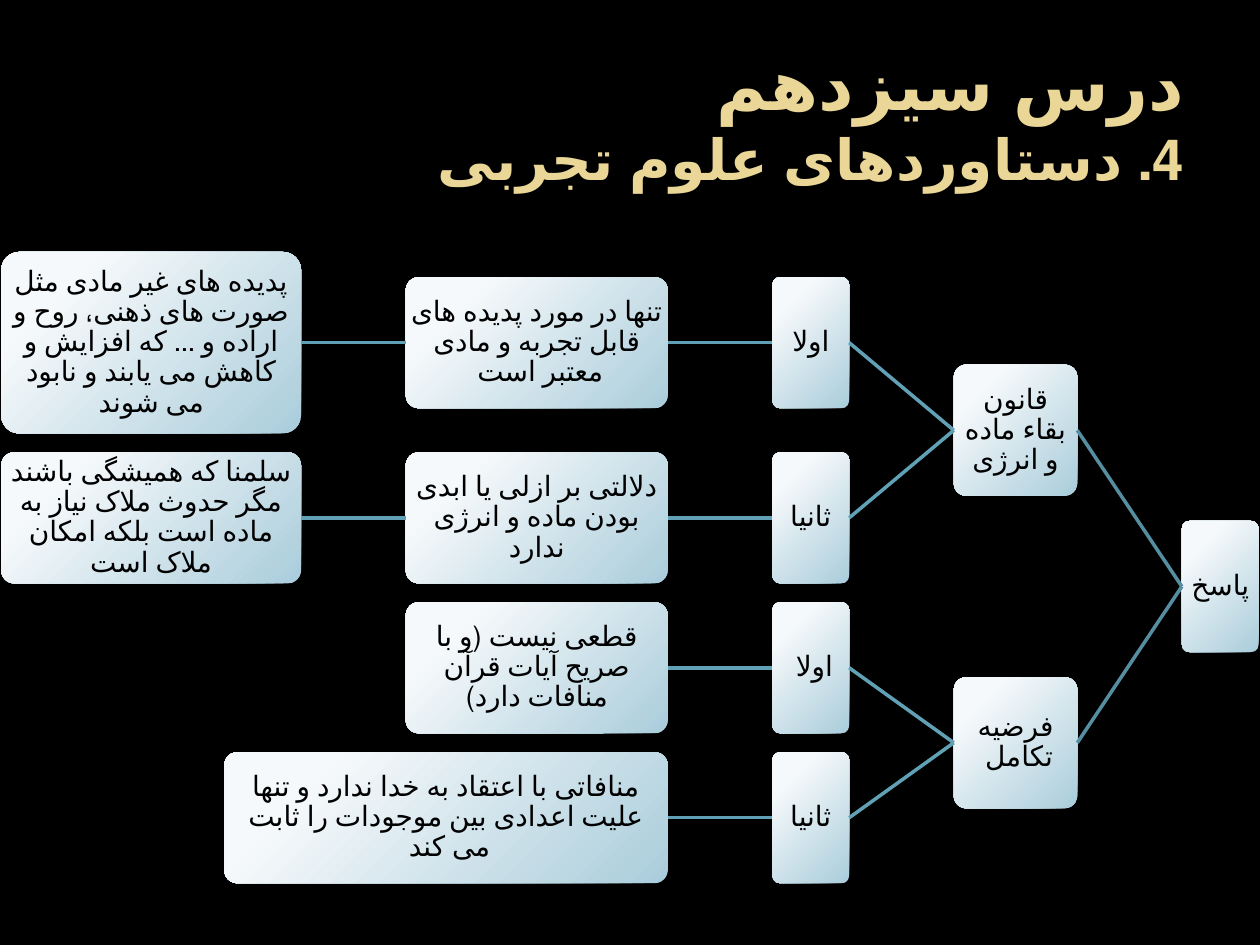
"""Builds a right-to-left answer tree about the findings of empirical science."""
from lxml import etree
from pptx import Presentation
from pptx.dml.color import RGBColor
from pptx.enum.shapes import MSO_CONNECTOR, MSO_SHAPE
from pptx.enum.text import MSO_ANCHOR, PP_ALIGN
from pptx.oxml.ns import qn
from pptx.util import Inches, Pt

STRAIGHT = MSO_CONNECTOR.STRAIGHT
ROUNDED = MSO_SHAPE.ROUNDED_RECTANGLE
MIDDLE = MSO_ANCHOR.MIDDLE
CENTER, RIGHT = PP_ALIGN.CENTER, PP_ALIGN.RIGHT
LEFT_SITE, RIGHT_SITE = 1, 3

BLACK = RGBColor(0x00, 0x00, 0x00)
GOLD = RGBColor(0xEA, 0xD6, 0x96)
BOX_LIGHT = RGBColor(0xF6, 0xF9, 0xFB)
BOX_BLUE = RGBColor(0xAA, 0xCD, 0xDB)
ROOT_LINE = RGBColor(0x56, 0x8E, 0xA1)
BRANCH_LINE = RGBColor(0x61, 0xA1, 0xB6)

TITLE = [("درس سیزدهم\v", 39.6), ("4. دستاوردهای علوم تجربی", 32.4)]

ROW_HEIGHT, ROW_GAP, COLUMN_GAP = 1.04, 0.15, 0.83
TREE_TOP, TREE_RIGHT = 2.0, 9.99


def node(text, width, *children, height=ROW_HEIGHT):
    """Describe one box and the boxes that follow from it."""
    return {"text": text, "width": width, "height": height, "children": children}


TREE = node(
    "پاسخ", 0.61,
    node(
        "قانون بقاء ماده و انرژی", 0.98,
        node("اولا", 0.61, node(
            "تنها در مورد پدیده های قابل تجربه و مادی معتبر است ", 2.08,
            node("پدیده های غیر مادی مثل صورت های ذهنی، روح و اراده و ... "
                 "که افزایش و کاهش می یابند و نابود می شوند", 2.38, height=1.44))),
        node("ثانیا", 0.61, node(
            "دلالتی بر ازلی یا ابدی بودن ماده و انرژی ندارد", 2.08,
            node("سلمنا که همیشگی باشند مگر حدوث ملاک نیاز به ماده است "
                 "بلکه امکان ملاک است", 2.38)))),
    node(
        "فرضیه تکامل ", 0.98,
        node("اولا ", 0.61, node(
            "قطعی نیست (و با صریح آیات قرآن منافات دارد)", 2.08)),
        node("ثانیا", 0.61, node(
            "منافاتی با اعتقاد به خدا ندارد و تنها علیت اعدادی بین موجودات را "
            "ثابت می کند ", 3.52))))


def write(frame, runs, font, color, align, bold=False, spacing=1.0, inset=None):
    """Fill a text frame with one right-to-left paragraph."""
    frame.word_wrap = True
    frame.vertical_anchor = MIDDLE
    if inset is not None:
        frame.margin_left = frame.margin_right = Inches(inset)
        frame.margin_top = frame.margin_bottom = Inches(inset)
    paragraph = frame.paragraphs[0]
    paragraph.alignment = align
    paragraph.line_spacing = spacing
    paragraph._p.get_or_add_pPr().set("rtl", "1")
    for text, size in runs:
        run = paragraph.add_run()
        run.text = text.rstrip("\v")
        run.font.name, run.font.size, run.font.bold = font, Pt(size), bold
        run.font.color.rgb = color
        run._r.get_or_add_rPr().set("lang", "fa-IR")
        if text.endswith("\v"):
            paragraph.add_line_break()


def place(item, right, top):
    """Set positions for a branch and return the top of the next free row."""
    item["left"] = right - item["width"]
    if not item["children"]:
        item["center"] = top + item["height"] / 2
        return top + item["height"] + ROW_GAP
    for child in item["children"]:
        top = place(child, item["left"] - COLUMN_GAP, top)
    item["center"] = (item["children"][0]["center"] + item["children"][-1]["center"]) / 2
    return top


def add_box(slide, item):
    """Add a rounded box with a glow-like gradient."""
    shape = slide.shapes.add_shape(
        ROUNDED, Inches(item["left"]), Inches(item["center"] - item["height"] / 2),
        Inches(item["width"]), Inches(item["height"]))
    shape.adjustments[0] = 0.1
    shape.shadow.inherit = False
    shape.line.fill.background()
    shape.fill.gradient()
    stops = zip(shape.fill.gradient_stops, ((0.2, BOX_LIGHT), (1, BOX_BLUE)))
    for stop, (position, color) in stops:
        stop.position, stop.color.rgb = position, color
    gradient = shape._element.spPr.find(qn("a:gradFill"))
    gradient.remove(gradient.find(qn("a:lin")))
    circle = etree.SubElement(gradient, qn("a:path"), {"path": "circle"})
    etree.SubElement(circle, qn("a:fillToRect"),
                     l="-15000", t="-15000", r="115000", b="115000")
    write(shape.text_frame, [(item["text"], 16)], "Vollkorn", BLACK, CENTER,
          spacing=0.9, inset=0.01)
    return shape


def draw(slide, item, line_color=ROOT_LINE):
    """Draw a branch with its connectors and return its first box."""
    box = add_box(slide, item)
    for child in item["children"]:
        child_box = draw(slide, child, BRANCH_LINE)
        connector = slide.shapes.add_connector(STRAIGHT, 0, 0, 0, 0)
        connector.begin_connect(box, LEFT_SITE)
        connector.end_connect(child_box, RIGHT_SITE)
        connector.line.color.rgb = line_color
        connector.line.width = Pt(2)
        etree.SubElement(connector._element.spPr, qn("a:effectLst"))
    return box


def main():
    presentation = Presentation()
    presentation.slide_width, presentation.slide_height = Inches(10), Inches(7.5)
    slide = presentation.slides.add_slide(presentation.slide_layouts[5])
    slide.background.fill.solid()
    slide.background.fill.fore_color.rgb = BLACK
    title = slide.shapes.title
    title.left, title.top = Inches(0.5), Inches(0.3)
    title.width, title.height = Inches(9), Inches(1.25)
    write(title.text_frame, TITLE, "Noto Sans", GOLD, RIGHT, bold=True)
    place(TREE, TREE_RIGHT, TREE_TOP)
    draw(slide, TREE)
    presentation.save("out.pptx")


if __name__ == "__main__":
    main()
